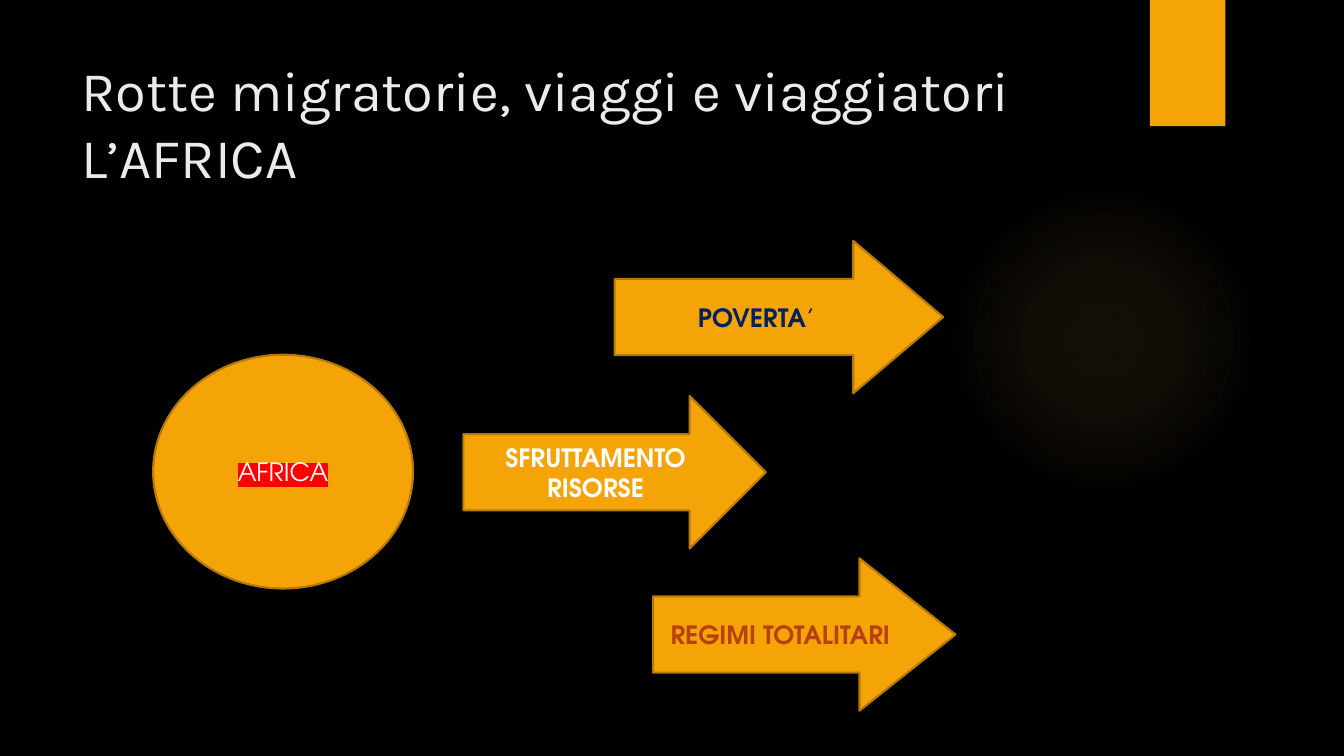
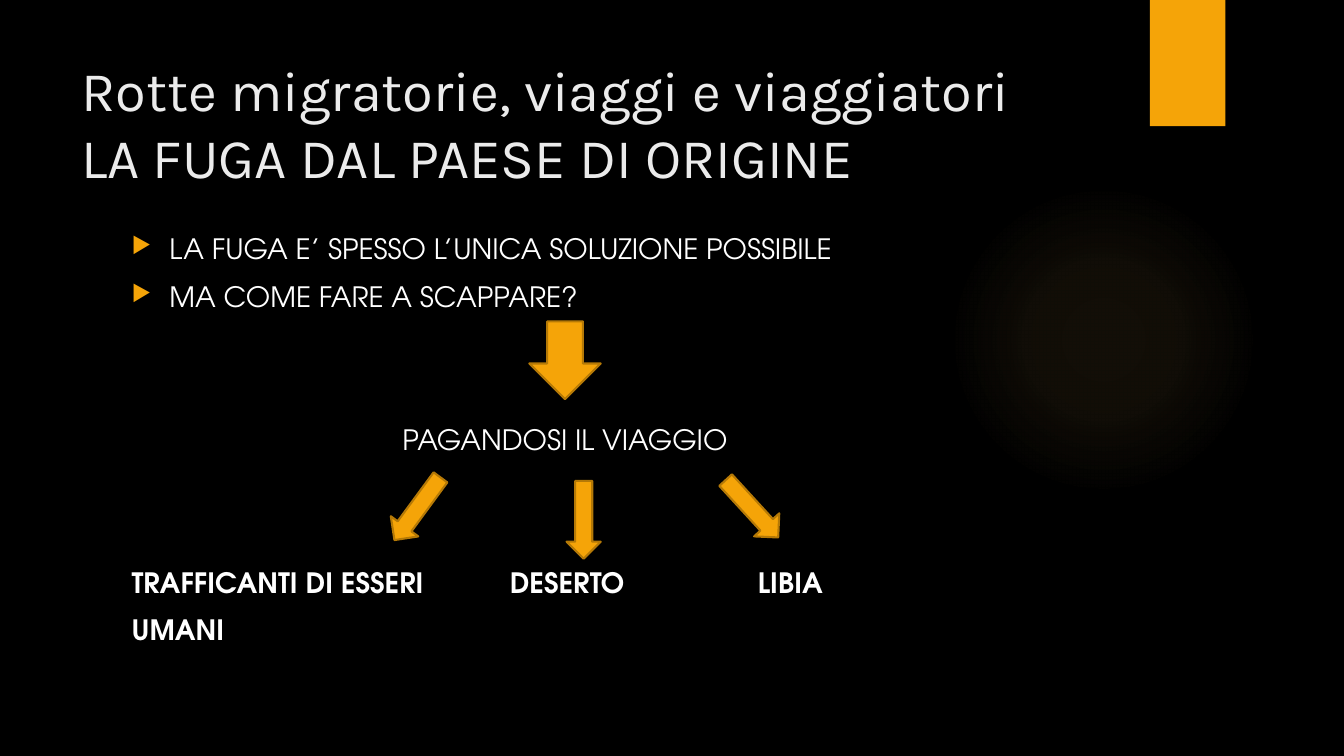
from dataclasses import dataclass

from lxml import etree
from pptx import Presentation
from pptx.dml.color import RGBColor
from pptx.enum import shapes, text
from pptx.oxml import ns
from pptx.util import Cm, Pt

SHAPE = shapes.MSO_SHAPE
ALIGN = text.PP_ALIGN
ANCHOR = text.MSO_ANCHOR


@dataclass(frozen=True)
class Theme:
    background: str = "000000"
    accent: str = "F5A408"
    outline: str = "B57906"
    glow: str = "FAC96A"
    title: str = "EBEBEB"
    body: str = "FFFFFF"
    navy: str = "002060"
    rust: str = "B7400D"
    highlight: str = "FF0000"
    title_font: str = "Karla"
    body_font: str = "TeX Gyre Adventor"
    title_size: float = 40
    body_size: float = 20
    shape_size: float = 18
    outline_width: float = 1.5


THEME = Theme()


@dataclass(frozen=True)
class Box:
    """An area in centimetres."""
    left: float
    top: float
    width: float
    height: float

    def inner(self, left, top, width, height):
        return Box(self.left + left, self.top + top, width, height)

    def lengths(self):
        return [Cm(n) for n in (self.left, self.top, self.width, self.height)]


TITLE_BOX = Box(1.8, 1.27, 26.14, 3.89)
CAUSES_BOX = Box(3.86, 6.07, 20.22, 11.84)
ESCAPE_BOX = Box(3.07, 5.72, 24.84, 11.66)


# Shared helpers
def rgb(value):
    return RGBColor.from_string(value)


def add_element(parent, tag, **attributes):
    return etree.SubElement(parent, ns.qn(tag), attributes)


def style_run(run, size, color, font=THEME.body_font, bold=False):
    run.font.size = Pt(size)
    run.font.color.rgb = rgb(color)
    run.font.name = font
    run.font.bold = bold


def add_text(slide, box, lines, size=THEME.body_size, color=THEME.body,
             font=THEME.body_font, bold=False, align=ALIGN.LEFT):
    frame = slide.shapes.add_textbox(*box.lengths()).text_frame
    frame.word_wrap = True
    frame.text = "\n".join(lines)
    for index, paragraph in enumerate(frame.paragraphs):
        paragraph.alignment = align
        if index:
            paragraph.space_before = Pt(10)
        for run in paragraph.runs:
            style_run(run, size, color, font, bold)
    return frame


def add_bullet(paragraph):
    props = paragraph._p.get_or_add_pPr()
    indent = Cm(0.95)
    props.set("marL", str(indent))
    props.set("indent", str(-indent))
    add_element(add_element(props, "a:buClr"), "a:srgbClr", val=THEME.accent)
    add_element(props, "a:buSzPct", val="80000")
    add_element(props, "a:buChar", char="▶")


def add_plain(slide, kind, box):
    shape = slide.shapes.add_shape(kind, *box.lengths())
    shape.shadow.inherit = False
    shape.fill.solid()
    shape.fill.fore_color.rgb = rgb(THEME.accent)
    shape.line.fill.background()
    return shape


def add_outlined(slide, kind, box):
    shape = add_plain(slide, kind, box)
    shape.line.color.rgb = rgb(THEME.outline)
    shape.line.width = Pt(THEME.outline_width)
    return shape


def label_shape(shape, label, color=THEME.body, bold=True):
    frame = shape.text_frame
    frame.word_wrap = True
    frame.vertical_anchor = ANCHOR.MIDDLE
    frame.text = label
    paragraph = frame.paragraphs[0]
    paragraph.alignment = ALIGN.CENTER
    style_run(paragraph.runs[0], THEME.shape_size, color, bold=bold)
    return paragraph


# Parts common to every slide
def add_glow(slide, box):
    glow = add_plain(slide, SHAPE.OVAL, box)
    solid = glow._element.spPr.find(ns.qn("a:solidFill"))
    gradient = etree.Element(ns.qn("a:gradFill"), rotWithShape="1")
    stops = add_element(gradient, "a:gsLst")
    for position, alpha in ((0, 7), (36, 6), (69, 0)):
        stop = add_element(stops, "a:gs", pos=str(position * 1000))
        color = add_element(stop, "a:srgbClr", val=THEME.glow)
        add_element(color, "a:alpha", val=str(alpha * 1000))
    circle = add_element(gradient, "a:path", path="circle")
    add_element(circle, "a:fillToRect",
                **{side: "50000" for side in ("l", "t", "r", "b")})
    solid.getparent().replace(solid, gradient)


def new_slide(deck, subtitle):
    slide = deck.slides.add_slide(deck.slide_layouts[6])
    slide.background.fill.solid()
    slide.background.fill.fore_color.rgb = rgb(THEME.background)
    add_glow(slide, Box(23.9, 4.65, 7.82, 7.82))
    add_plain(slide, SHAPE.RECTANGLE, Box(28.98, 0, 1.9, 3.18))
    add_text(slide, TITLE_BOX,
             ["Rotte migratorie, viaggi e viaggiatori\v" + subtitle],
             THEME.title_size, THEME.title, THEME.title_font)
    return slide


# Slide 1: the continent and the causes of departure
def add_causes(slide, box):
    africa = add_outlined(slide, SHAPE.OVAL, box.inner(0, 2.87, 6.55, 5.89))
    name = label_shape(africa, "AFRICA", bold=False).runs[0]
    fill = name._r.get_or_add_rPr().find(ns.qn("a:solidFill"))
    highlight = etree.Element(ns.qn("a:highlight"))
    add_element(highlight, "a:srgbClr", val=THEME.highlight)
    fill.addnext(highlight)

    causes = (
        ("POVERTA", THEME.navy, 11.63, 0, 8.28, 0.59),
        ("SFRUTTAMENTO RISORSE", THEME.body, 7.82, 3.91, 7.62, 0.5),
        ("REGIMI TOTALITARI", THEME.rust, 12.6, 8, 7.62, 0.63),
    )
    paragraphs = []
    for label, color, left, top, width, head in causes:
        arrow = add_outlined(slide, SHAPE.RIGHT_ARROW,
                             box.inner(left, top, width, 3.84))
        arrow.adjustments[1] = head
        paragraphs.append(label_shape(arrow, label, color))

    accent_mark = paragraphs[0].add_run()
    accent_mark.text = "’"
    style_run(accent_mark, THEME.shape_size, THEME.navy)


# Slide 2: how the escape is paid for and where it leads
def add_escape(slide, box):
    intro = add_text(slide, box.inner(0, 0, box.width, 2.3),
                     ["LA FUGA E’ SPESSO L’UNICA SOLUZIONE POSSIBILE",
                      "MA COME FARE A SCAPPARE?"])
    for paragraph in intro.paragraphs:
        add_bullet(paragraph)

    axis = 11.17
    arrow_height = 1.96
    add_outlined(slide, SHAPE.DOWN_ARROW,
                 box.inner(axis - 0.9, 2.38, 1.8, arrow_height))
    add_text(slide, box.inner(axis - 5, 4.8, 10, 1.1),
             ["PAGANDOSI IL VIAGGIO"], align=ALIGN.CENTER)

    # Outcomes: arrow centre, top and angle, then label left, width and lines
    outcomes = (
        (7.45, 6.12, 36.3, 0, 9, ["TRAFFICANTI DI ESSERI", "UMANI"]),
        (11.64, 6.4, 0, 9.53, 5, ["DESERTO"]),
        (15.88, 6.12, 317.5, 15.78, 5, ["LIBIA"]),
    )
    for centre, top, angle, left, width, lines in outcomes:
        arrow = add_outlined(slide, SHAPE.DOWN_ARROW,
                             box.inner(centre - 0.43, top, 0.86, arrow_height))
        arrow.rotation = angle
        add_text(slide, box.inner(left, 8.4, width, 1.1 * len(lines)), lines,
                 bold=True)


def main():
    deck = Presentation()
    deck.slide_width = Cm(33.87)
    deck.slide_height = Cm(19.05)
    add_causes(new_slide(deck, "L’AFRICA"), CAUSES_BOX)
    add_escape(new_slide(deck, "LA FUGA DAL PAESE DI ORIGINE"), ESCAPE_BOX)
    deck.save("out.pptx")


if __name__ == "__main__":
    main()
